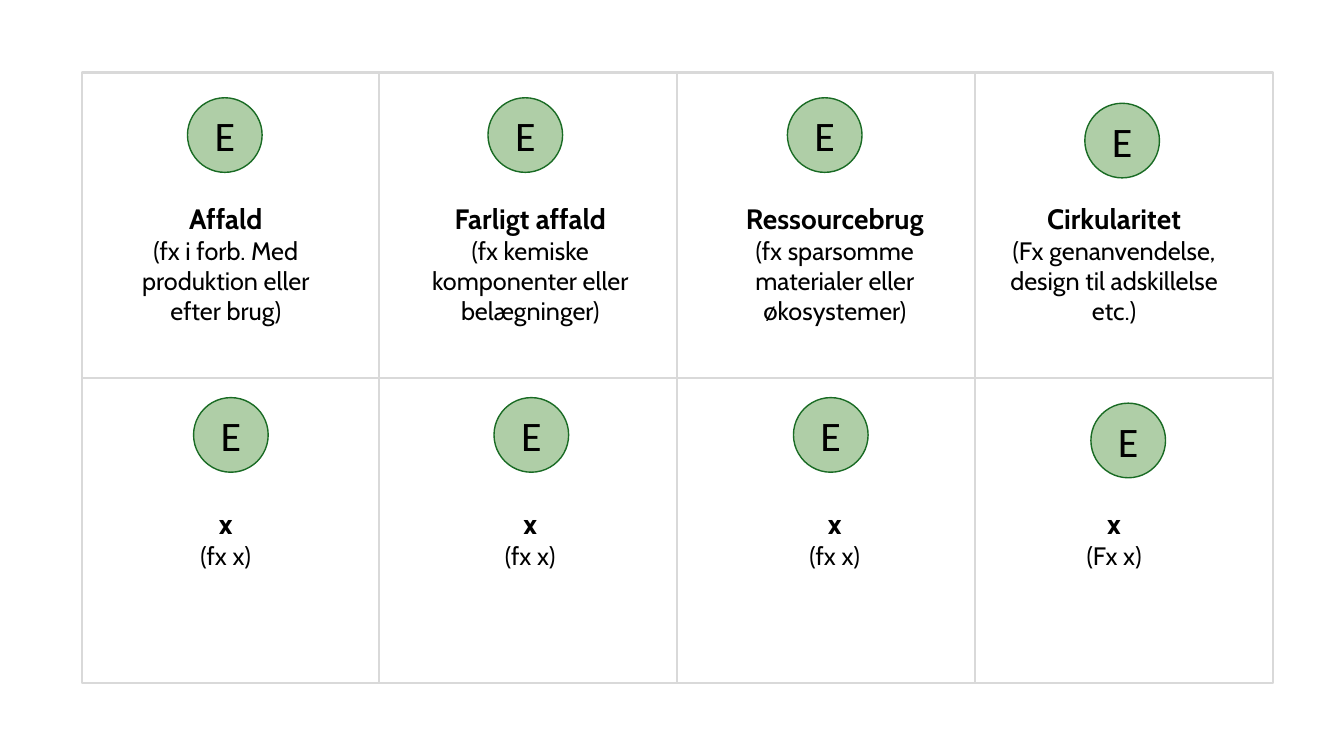
import pptx
import pptx.util
import pptx.dml.color
import pptx.enum.shapes
import pptx.enum.text

In, Pt = pptx.util.Inches, pptx.util.Pt
RGB = pptx.dml.color.RGBColor.from_string
SHAPE = pptx.enum.shapes.MSO_SHAPE
CENTER = pptx.enum.text.PP_ALIGN.CENTER

# Theme: colours and type sizes
theme = {
    "grid": RGB("D9D9D9"),
    "badge": RGB("AFCEA7"),
    "badge_line": RGB("196B24"),
    "heading": {"name": "Cabin", "size": Pt(20), "bold": True},
    "example": {"name": "Cabin", "size": Pt(18), "bold": False},
    "letter": {"name": "Calibri", "size": Pt(30), "bold": False},
}
ink = RGB("000000")

# Content, one list per grid row
rows = [
    [("Affald", "(fx i forb. Med produktion eller efter brug)"),
     ("Farligt affald", "(fx kemiske komponenter eller belægninger)"),
     ("Ressourcebrug", "(fx sparsomme materialer eller økosystemer)"),
     ("Cirkularitet", "(Fx genanvendelse, design til adskillelse etc.)")],
    [("x", "(fx x)"), ("x", "(fx x)"), ("x", "(fx x)"), ("x", "(Fx x)")],
]

# Grid geometry in inches
left, top, cell_w, cell_h = 0.81, 0.72, 2.953, 3.03
text_x, text_y, text_w = [1.11, 4.13, 7.15, 9.92], 1.95, 2.26
badge_x, badge_y, badge_d = [1.86, 4.84, 7.81, 10.76], 0.97, 0.74
badge_drop = [0, 0, 0, 0.055]
badge_shift, badge_pitch = 0.06, 2.975


def add_shape(kind, x, y, w, h, line, width, fill=None):
    sp = s.shapes.add_shape(kind, In(x), In(y), In(w), In(h))
    sp.shadow.inherit = False
    if fill is None:
        sp.fill.background()
    else:
        sp.fill.solid()
        sp.fill.fore_color.rgb = fill
    sp.line.color.rgb = line
    sp.line.width = Pt(width)
    return sp


def write(p, text, style):
    p.alignment = CENTER
    r = p.add_run()
    r.text = text
    for key, value in theme[style].items():
        setattr(r.font, key, value)
    r.font.color.rgb = ink


prs = pptx.Presentation()
prs.slide_width, prs.slide_height = In(13.33), In(7.5)
s = prs.slides.add_slide(prs.slide_layouts[6])

# Grid cells
for row in range(len(rows)):
    for col in range(len(rows[row])):
        add_shape(SHAPE.RECTANGLE, left + col * cell_w, top + row * cell_h,
                  cell_w, cell_h, theme["grid"], 1.5)

# Headings with examples
for row, items in enumerate(rows):
    for x, (heading, example) in zip(text_x, items):
        sp = s.shapes.add_textbox(In(x), In(text_y + row * cell_h),
                                  In(text_w), In(1.35 if row == 0 else 0.74))
        tf = sp.text_frame
        tf.word_wrap = True
        tf.auto_size = pptx.enum.text.MSO_AUTO_SIZE.SHAPE_TO_FIT_TEXT
        write(tf.paragraphs[0], heading, "heading")
        write(tf.add_paragraph(), example, "example")

# Round letter badges
badge_format = {
    "margin_left": 0, "margin_right": 0,
    "margin_top": In(0.05), "margin_bottom": In(0.05),
    "vertical_anchor": pptx.enum.text.MSO_ANCHOR.MIDDLE,
}
for row in range(len(rows)):
    for x, drop in zip(badge_x, badge_drop):
        sp = add_shape(SHAPE.OVAL, x + row * badge_shift,
                       badge_y + drop + row * badge_pitch, badge_d, badge_d,
                       theme["badge_line"], 1, theme["badge"])
        for key, value in badge_format.items():
            setattr(sp.text_frame, key, value)
        write(sp.text_frame.paragraphs[0], "E", "letter")

prs.save("out.pptx")
